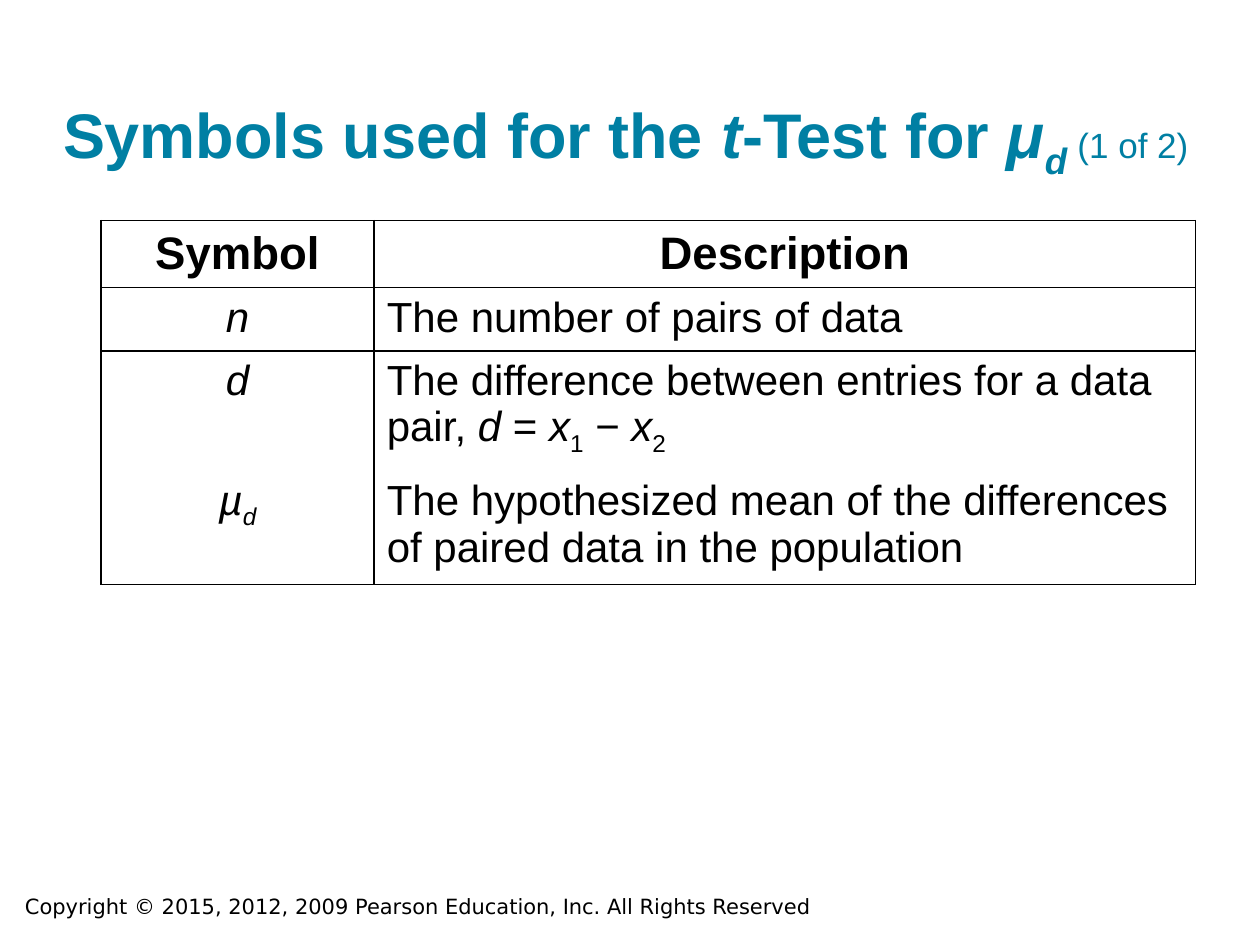
from dataclasses import dataclass

from lxml.etree import SubElement
from pptx import Presentation
from pptx.dml.color import RGBColor
from pptx.enum.text import MSO_ANCHOR, PP_ALIGN
from pptx.oxml.ns import qn
from pptx.util import Inches, Pt


@dataclass(frozen=True)
class Theme:
    font: str = "Arial"
    footer_font: str = "DejaVu Sans"
    title_color: str = "007FA3"
    text_color: str = "000000"
    cell_color: str = "FFFFFF"
    title_size: int = 36
    part_size: int = 20
    header_size: int = 26
    body_size: int = 24
    footer_size: int = 12
    border_width: int = 1


TITLE = [("Symbols used for the ", "b"), ("t", "bi"), ("-Test for ", "b"),
         ("μ", "bi"), ("d ", "bis"), ("(1 of 2)", "p")]
HEADER = [[("Symbol", "b")], [("Description", "b")]]
SYMBOLS = [
    [[("n", "i")], [("The number of pairs of data", "")]],
    [[("d", "i")],
     [("The difference between entries for a data pair, ", ""), ("d", "i"), (" = ", ""),
      ("x", "i"), ("1", "s"), (" − ", ""), ("x", "i"), ("2", "s")]],
    [[("µ", "i"), ("d", "is")],
     [("The hypothesized mean of the differences of paired data in the population", "")]],
]
COLUMN_WIDTHS = [2.17, 6.52]
ROW_HEIGHTS = [0.5, 0.47, 0.9, 0.85]


class SlideBuilder:
    def __init__(self, slide, theme):
        self.slide = slide
        self.theme = theme

    def write_runs(self, paragraph, pieces, size, color, font=None):
        """Add (text, marks) pieces; marks: b bold, i italic, s subscript, p part number."""
        for text, marks in pieces:
            run = paragraph.add_run()
            run.text = text
            run.font.name = font or self.theme.font
            run.font.size = Pt(self.theme.part_size if "p" in marks else size)
            run.font.color.rgb = RGBColor.from_string(color)
            run.font.bold = "b" in marks
            run.font.italic = "i" in marks
            if "s" in marks:
                run.font._element.set("baseline", "-25000")

    def text_box(self, left, top, width, height):
        shape = self.slide.shapes.add_textbox(
            Inches(left), Inches(top), Inches(width), Inches(height))
        shape.text_frame.word_wrap = True
        return shape.text_frame

    def title(self, pieces):
        frame = self.text_box(0.5, 0.24, 9.08, 1.2)
        frame.margin_left = frame.margin_right = frame.margin_top = frame.margin_bottom = 0
        frame.vertical_anchor = MSO_ANCHOR.BOTTOM
        self.write_runs(frame.paragraphs[0], pieces, self.theme.title_size,
                        self.theme.title_color)

    def footer(self, text):
        frame = self.text_box(0.1, 7.04, 7.83, 0.3)
        self.write_runs(frame.paragraphs[0], [(text, "")], self.theme.footer_size,
                        self.theme.text_color, self.theme.footer_font)

    def borders(self, cell, hidden):
        """Draw every side of the cell except the hidden ones."""
        properties = cell._tc.get_or_add_tcPr()
        for position, side in enumerate("LRTB"):
            line = SubElement(properties, qn(f"a:ln{side}"), w=str(Pt(self.theme.border_width)))
            if side in hidden:
                SubElement(line, qn("a:noFill"))
            else:
                fill = SubElement(line, qn("a:solidFill"))
                SubElement(fill, qn("a:srgbClr"), val=self.theme.text_color)
            properties.insert(position, line)

    def table(self, rows):
        table = self.slide.shapes.add_table(
            len(rows), len(COLUMN_WIDTHS), Inches(0.8), Inches(1.75),
            Inches(sum(COLUMN_WIDTHS)), Inches(sum(ROW_HEIGHTS))).table
        table.first_row = table.horz_banding = False
        for column, width in zip(table.columns, COLUMN_WIDTHS):
            column.width = Inches(width)
        hidden_sides = {len(rows) - 2: "B", len(rows) - 1: "T"}
        for row_index, row in enumerate(rows):
            table.rows[row_index].height = Inches(ROW_HEIGHTS[row_index])
            is_header = row_index == 0
            for column_index, pieces in enumerate(row):
                cell = table.cell(row_index, column_index)
                cell.fill.solid()
                cell.fill.fore_color.rgb = RGBColor.from_string(self.theme.cell_color)
                cell.vertical_anchor = MSO_ANCHOR.MIDDLE if is_header else MSO_ANCHOR.TOP
                self.borders(cell, hidden_sides.get(row_index, ""))
                paragraph = cell.text_frame.paragraphs[0]
                centered = is_header or column_index == 0
                paragraph.alignment = PP_ALIGN.CENTER if centered else PP_ALIGN.LEFT
                size = self.theme.header_size if is_header else self.theme.body_size
                self.write_runs(paragraph, pieces, size, self.theme.text_color)


def main():
    presentation = Presentation()
    presentation.slide_width = Inches(10)
    presentation.slide_height = Inches(7.5)
    slide = presentation.slides.add_slide(presentation.slide_layouts[6])
    builder = SlideBuilder(slide, Theme())
    builder.footer("Copyright © 2015, 2012, 2009 Pearson Education, Inc. All Rights Reserved")
    builder.title(TITLE)
    builder.table([HEADER, *SYMBOLS])
    presentation.save("out.pptx")


if __name__ == "__main__":
    main()
